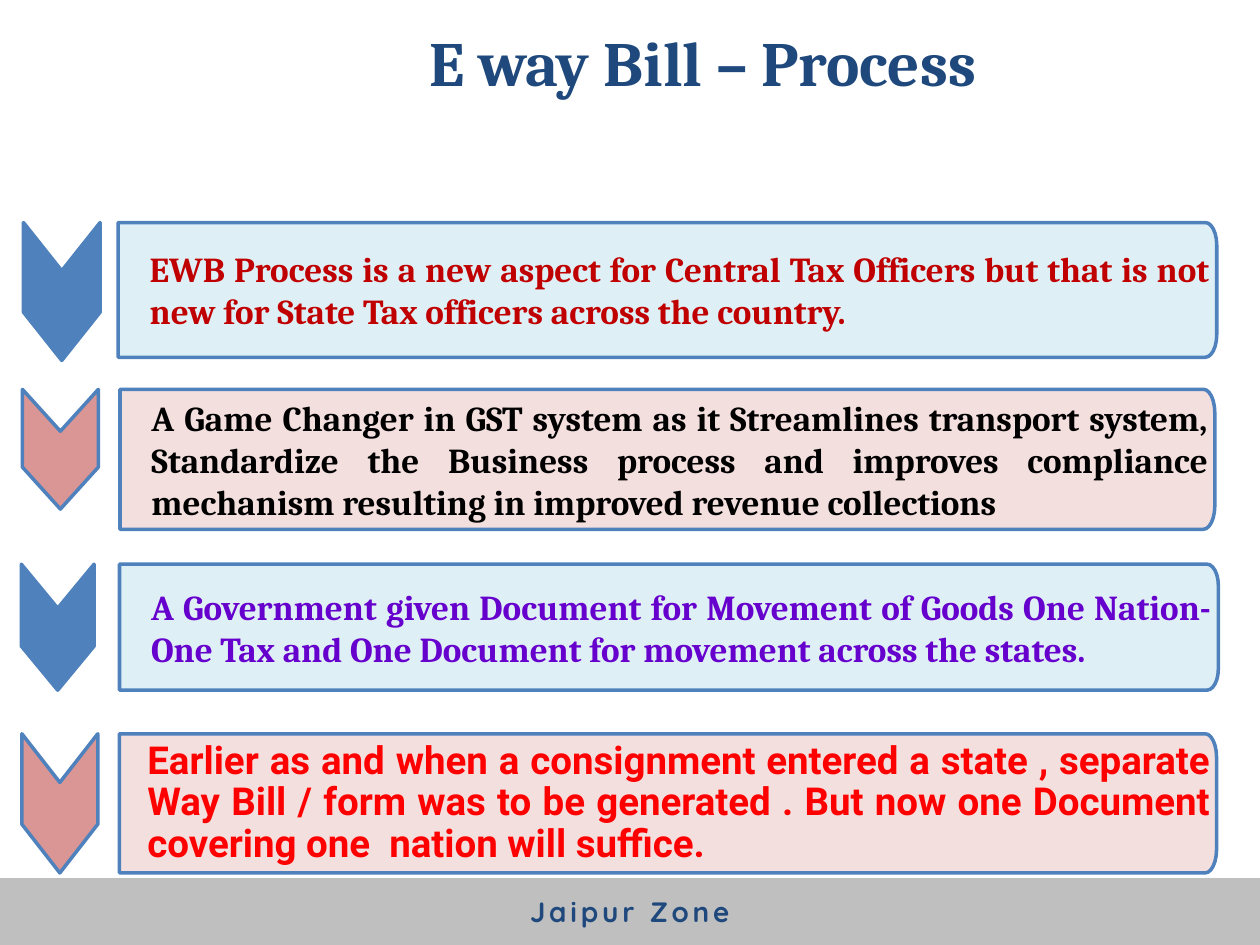
import math

from lxml import etree
from pptx import Presentation, util as u
from pptx.dml.color import RGBColor
from pptx.enum import shapes, text
from pptx.oxml import ns

Pt = u.Pt
theme = {
    "navy": "1F497D", "blue": "4F81BD", "rose": "D99694", "white": "FFFFFF",
    "pale_blue": "DBEEF4", "pale_rose": "F2DCDB", "grey": "BFBFBF",
    "crimson": "C00000", "black": "000000", "violet": "6600CC", "red": "FF0000",
    "serif": "Cambria", "sans": "Roboto", "rounded": "Quicksand",
    "title_size": 36, "body_size": 20, "large_size": 22, "footer_size": 16,
}
center, justify = text.PP_ALIGN.CENTER, text.PP_ALIGN.JUSTIFY


def paint(part, fill, line=None, width=2):
    part.shadow.inherit = False
    part.fill.solid()
    part.fill.fore_color.rgb = RGBColor.from_string(theme[fill])
    if line:
        part.line.color.rgb = RGBColor.from_string(theme[line])
        part.line.width = Pt(width)
    else:
        part.line.fill.background()


def write(part, wording, font, size, color, align, frame_format, spacing=None):
    frame = part.text_frame
    defaults = {"word_wrap": True, "auto_size": text.MSO_AUTO_SIZE.NONE,
                "vertical_anchor": text.MSO_ANCHOR.MIDDLE}
    for key, value in {**defaults, **frame_format}.items():
        setattr(frame, key, value)
    paragraph = frame.paragraphs[0]
    paragraph.alignment = align
    if spacing:
        paragraph.line_spacing = spacing
    run = paragraph.add_run()
    run.text = wording
    for key, value in {"name": theme[font], "size": Pt(theme[size]), "bold": True}.items():
        setattr(run.font, key, value)
    run.font.color.rgb = RGBColor.from_string(theme[color])
    return run


deck = Presentation()
deck.slide_width, deck.slide_height = Pt(720), Pt(540)
slide = deck.slides.add_slide(deck.slide_layouts[5])

heading = slide.shapes.title
for key, value in {"left": 186.5, "top": 11.5, "width": 430, "height": 60.5}.items():
    setattr(heading, key, Pt(value))
paint(heading, "white", "white", 2.25)
write(heading, "E way Bill – Process", "serif", "title_size", "navy", center, {}, Pt(30))

steps = [
    ("EWB Process is a new aspect for Central Tax Officers but that is not new for State Tax officers across the country.",
     "crimson", "serif", "body_size", 18, None, (67.5, 127.2, 627.8, 77), (13.4, 43.8, 78.8)),
    ("A Game Changer in GST system as it Streamlines transport system, Standardize the Business process and improves compliance mechanism resulting in improved revenue collections",
     "black", "serif", "body_size", 18, None, (68.6, 222.5, 625.6, 80), (12.8, 43.4, 68.4)),
    ("A Government given Document for Movement of Goods One Nation-One Tax and One Document for movement across the states.",
     "violet", "serif", "body_size", 18, None, (68.3, 322.4, 627.9, 72), (12.2, 41.6, 72)),
    ("Earlier as and when a consignment entered a state , separate Way Bill / form was to be generated . But now one Document covering one  nation will suffice.",
     "red", "sans", "large_size", 16, 0.9, (68.3, 419.3, 626.9, 79.5), (12.5, 43.4, 79.5)),
]
corner_width = 6.5
quarter = [math.radians(angle) for angle in range(0, 91, 15)]

for index, (wording, color, font, size, inset, spacing, panel_box, arrow_box) in enumerate(steps):
    left, top, width, height = panel_box
    arrow_left, arrow_width, arrow_height = arrow_box
    right, bottom, corner_height = left + width, top + height, height / 6

    bends = [(right - corner_width * (1 - math.sin(a)), corner_height * (1 - math.cos(a)))
             for a in quarter]
    panel_points = [(left, top)]
    panel_points += [(x, top + drop) for x, drop in bends]
    panel_points += [(x, bottom - drop) for x, drop in reversed(bends)]
    panel_points.append((left, bottom))

    arrow_right, arrow_middle = arrow_left + arrow_width, arrow_left + arrow_width / 2
    notch, shoulder = top + 0.35 * arrow_height, top + 0.65 * arrow_height
    arrow_points = [(arrow_left, top), (arrow_middle, notch), (arrow_right, top),
                    (arrow_right, shoulder), (arrow_middle, top + arrow_height),
                    (arrow_left, shoulder)]

    outlines = []
    for points in (arrow_points, panel_points):
        corners = [(Pt(x), Pt(y)) for x, y in points]
        builder = slide.shapes.build_freeform(*corners[0])
        builder.add_line_segments(corners[1:], close=True)
        outlines.append(builder.convert_to_shape())
    arrow, panel = outlines

    paint(arrow, ("blue", "rose")[index % 2], "blue")
    paint(panel, ("pale_blue", "pale_rose")[index % 2], "blue")
    fill_color = panel._element.spPr.find(ns.qn("a:solidFill"))[0]
    etree.SubElement(fill_color, ns.qn("a:alpha")).set("val", "90000")
    margins = {"margin_left": Pt(inset), "margin_right": Pt(3.6),
               "margin_top": Pt(3.6), "margin_bottom": Pt(3.6)}
    write(panel, wording, font, size, color, justify, margins, spacing)

footer = slide.shapes.add_shape(shapes.MSO_SHAPE.RECTANGLE, 0, Pt(501.8), Pt(720), Pt(38.5))
paint(footer, "grey")
zone = write(footer, "Jaipur Zone", "rounded", "footer_size", "navy", center, {})
zone._r.get_or_add_rPr().set("spc", "220")

deck.save("out.pptx")
